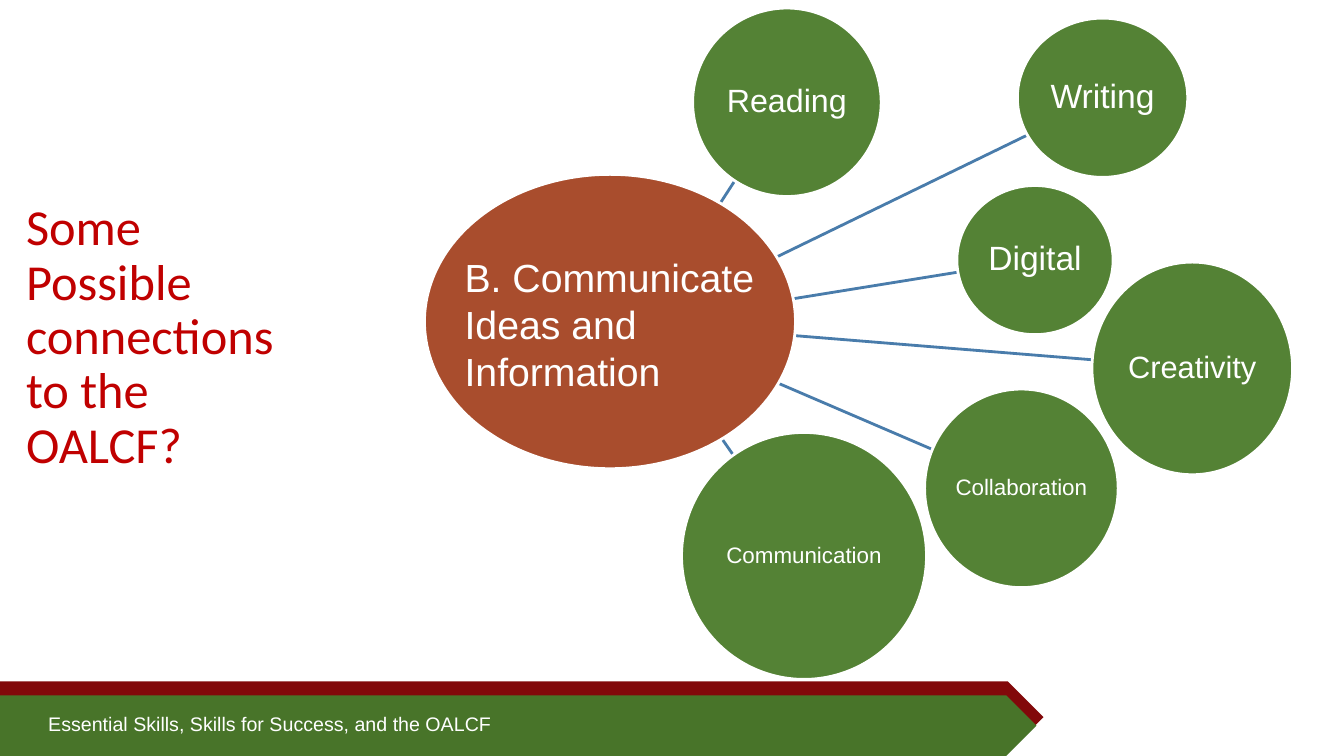
from pptx import Presentation
from pptx.dml.color import RGBColor
from pptx.enum.shapes import MSO_CONNECTOR, MSO_SHAPE
from pptx.enum.text import MSO_ANCHOR, PP_ALIGN
from pptx.oxml.ns import qn
from pptx.util import Inches, Pt
from lxml import etree

COLORS = {
    "white": "FFFFFF",
    "title": "C00000",
    "banner_back": "82080A",
    "banner_front": "487429",
    "hub": "A94D2D",
    "skill": "548235",
    "spoke": "497CAB",
}

# skill, size of its text, circle (left, top, width, height), spoke (start, end)
SKILLS = [
    ("Communication", 16, (6.76, 4.29, 2.43, 2.45), (6.74, 3.75, 7.27, 4.51)),
    ("Collaboration", 16, (9.17, 3.86, 1.92, 1.97), (6.9, 3.45, 9.25, 4.46)),
    ("Creativity", 22, (10.83, 2.6, 1.99, 2.11), (6.9, 3.25, 10.84, 3.57)),
    ("Digital", 24, (9.49, 1.84, 1.55, 1.48), (6.9, 3.12, 9.5, 2.7)),
    ("Writing", 24, (10.09, 0.18, 1.69, 1.58), (6.9, 2.94, 10.19, 1.34)),
    ("Reading", 23, (6.87, 0.08, 1.87, 1.87), (6.72, 2.67, 7.29, 1.79)),
]


def rgb(name):
    return RGBColor.from_string(COLORS[name])


def write_text(shape, text, size, color="white", font="Arial", align=PP_ALIGN.LEFT,
               anchor=MSO_ANCHOR.TOP, spacing=1.0, inset=(0.1, 0.05)):
    frame = shape.text_frame
    frame.word_wrap = True
    frame.vertical_anchor = anchor
    frame.margin_left = frame.margin_right = Inches(inset[0])
    frame.margin_top = frame.margin_bottom = Inches(inset[1])
    paragraph = frame.paragraphs[0]
    paragraph.text = text
    paragraph.alignment = align
    paragraph.line_spacing = spacing
    paragraph.font.name = font
    paragraph.font.size = Pt(size)
    paragraph.font.color.rgb = rgb(color)


def add_label(slide, box, text, size, **style):
    label = slide.shapes.add_textbox(*map(Inches, box))
    write_text(label, text, size, **style)


def add_filled(slide, preset, box, fill, outline=None):
    shape = slide.shapes.add_shape(preset, *map(Inches, box))
    shape.shadow.inherit = False
    shape.fill.solid()
    shape.fill.fore_color.rgb = rgb(fill)
    if outline:
        shape.line.color.rgb = rgb(outline)
        shape.line.width = Pt(2)
    else:
        shape.line.fill.background()
    return shape


def add_spoke(slide, ends):
    spoke = slide.shapes.add_connector(MSO_CONNECTOR.STRAIGHT, *map(Inches, ends))
    spoke.line.color.rgb = rgb("spoke")
    spoke.line.width = Pt(2)
    etree.SubElement(spoke._element.spPr, qn("a:effectLst"))


def add_banner(slide):
    add_filled(slide, MSO_SHAPE.PENTAGON, (0, 6.76, 10.35, 0.71), "banner_back")
    add_filled(slide, MSO_SHAPE.PENTAGON, (0, 6.9, 10.28, 0.6), "banner_front")
    add_label(slide, (0.38, 7.01, 9.27, 0.34),
              "Essential Skills, Skills for Success, and the OALCF", 14)


def add_skill_map(slide):
    for _, _, _, ends in SKILLS:
        add_spoke(slide, ends)
    add_filled(slide, MSO_SHAPE.OVAL, (4.21, 1.73, 3.68, 2.92), "hub", outline="white")
    for skill, size, box, _ in reversed(SKILLS):
        circle = add_filled(slide, MSO_SHAPE.OVAL, box, "skill", outline="white")
        write_text(circle, skill, size, align=PP_ALIGN.CENTER,
                   anchor=MSO_ANCHOR.MIDDLE, spacing=0.9, inset=(0.01, 0.01))
    add_label(slide, (4.51, 2.46, 3.09, 1.51),
              "B. Communicate Ideas and Information", 28)


def main():
    deck = Presentation()
    deck.slide_width = Inches(13.33)
    deck.slide_height = Inches(7.5)
    slide = deck.slides.add_slide(deck.slide_layouts[6])
    add_banner(slide)
    add_label(slide, (0.16, 0.69, 2.8, 5.33), "Some Possible connections to the OALCF?",
              36, color="title", font="Calibri", anchor=MSO_ANCHOR.MIDDLE, spacing=0.9)
    add_skill_map(slide)
    deck.save("out.pptx")


if __name__ == "__main__":
    main()
